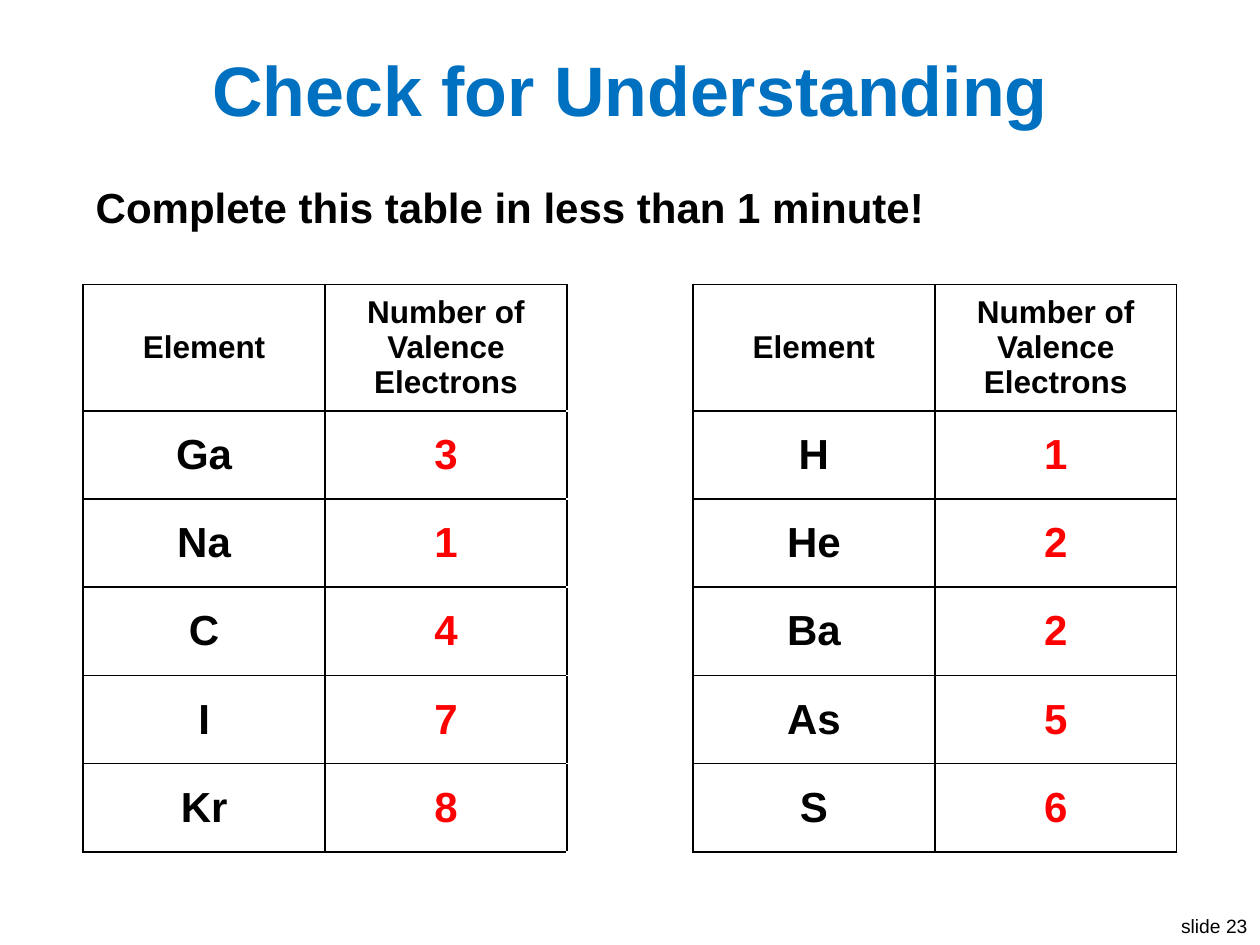
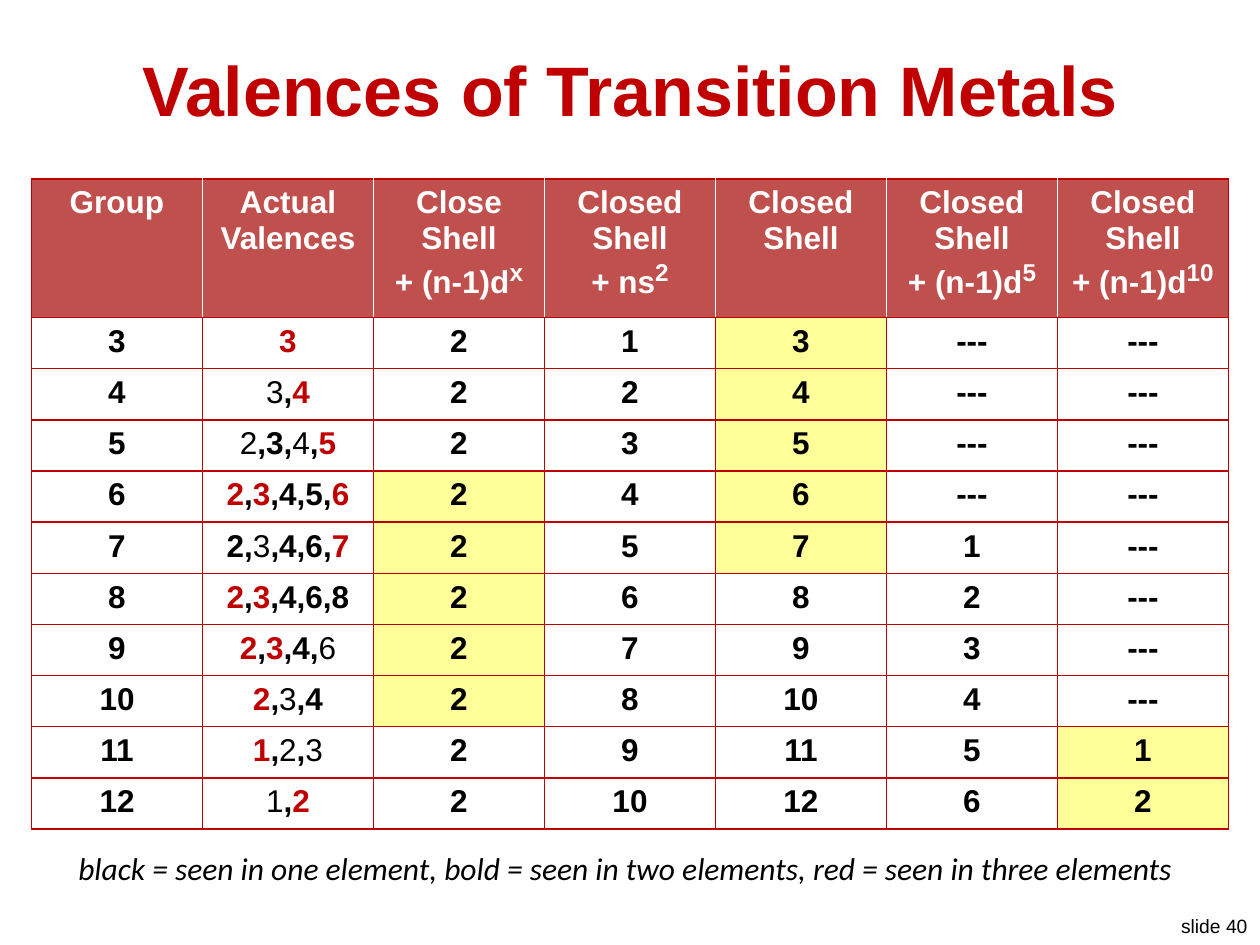
from itertools import groupby

from lxml.etree import SubElement
from pptx import Presentation
from pptx.dml.color import RGBColor
from pptx.enum.text import MSO_ANCHOR as Anchor, MSO_AUTO_SIZE as AutoSize, PP_ALIGN as Align
from pptx.oxml.ns import qn
from pptx.util import Inches, Pt

BLACK = RGBColor(0, 0, 0)
WHITE = RGBColor(0xFF, 0xFF, 0xFF)
BLUE = RGBColor(0x00, 0x70, 0xC0)
RED = RGBColor(0xFF, 0, 0)
DARK_RED = RGBColor(0xC0, 0, 0)
BRICK = RGBColor(0xC0, 0x50, 0x4D)
YELLOW = RGBColor(0xFF, 0xFF, 0x99)

SLIDE_W, SLIDE_H = 10, 7.5
TABLE_TOP = 1.42

QUIZ_TITLE = "Check for Understanding"
QUIZ_TASK = "Complete this table in less than 1 minute!"
QUIZ_HEADINGS = ("Element", "Number of Valence Electrons")
QUIZ_LEFT = [("Ga", 3), ("Na", 1), ("C", 4), ("I", 7), ("Kr", 8)]
QUIZ_RIGHT = [("H", 1), ("He", 2), ("Ba", 2), ("As", 5), ("S", 6)]
QUIZ_COLUMNS = (1.92, 1.92, 1, 1.92, 1.92)
QUIZ_ROWS = (0.84, 0.94) + (0.7,) * len(QUIZ_LEFT)
GAP_COLUMN = 2

METALS_TITLE = "Valences of Transition Metals"
METALS_HEADINGS = [
    ("Group",),
    ("Actual Valences",),
    ("Close Shell", "+ (n-1)d", "x"),
    ("Closed Shell", "+ ns", "2"),
    ("Closed Shell",),
    ("Closed Shell", "+ (n-1)d", "5"),
    ("Closed Shell", "+ (n-1)d", "10"),
]
# n = normal, b = bold, r = red
METALS = [
    ("3", "r3", "2", "1", "3", "---", "---"),
    ("4", "n3 r4", "2", "2", "4", "---", "---"),
    ("5", "n2 b3 n4 r5", "2", "3", "5", "---", "---"),
    ("6", "r2 r3 b4 b5 r6", "2", "4", "6", "---", "---"),
    ("7", "b2 n3 b4 b6 r7", "2", "5", "7", "1", "---"),
    ("8", "r2 r3 b4 b6 b8", "2", "6", "8", "2", "---"),
    ("9", "r2 r3 b4 n6", "2", "7", "9", "3", "---"),
    ("10", "r2 n3 b4", "2", "8", "10", "4", "---"),
    ("11", "r1 n2 n3", "2", "9", "11", "5", "1"),
    ("12", "n1 r2", "2", "10", "12", "6", "2"),
]
VALENCE_COLUMN = 1
HIGHLIGHTED_GROUPS = {2: range(6, 11), 4: range(3, 8), 6: range(11, 13)}
METALS_WIDTH = 0.95 * SLIDE_W
METALS_HEADER_H, METALS_BODY_H = 1.03, 4.06
LEGEND = "black = seen in one element, bold = seen in two elements, red = seen in three elements"


def add_run(paragraph, text, size, color=BLACK, bold=True, italic=False, font="Arial", raised=False):
    run = paragraph.add_run()
    run.text = text
    run.font.name, run.font.size = font, Pt(size)
    run.font.bold, run.font.italic = bold, italic
    run.font.color.rgb = color
    if raised:
        run._r.get_or_add_rPr().set("baseline", "30000")


def add_line(slide, box, text, align, size, **style):
    frame = slide.shapes.add_textbox(*map(Inches, box)).text_frame
    frame.word_wrap = False
    frame.paragraphs[0].alignment = align
    add_run(frame.paragraphs[0], text, size, bold=False, **style)


def start_slide(prs, title, color, number):
    slide = prs.slides.add_slide(prs.slide_layouts[5])
    heading = slide.shapes.title
    heading.left, heading.top = Inches(0.02 * SLIDE_W), Inches(0.04 * SLIDE_H)
    heading.width, heading.height = Inches(0.96 * SLIDE_W), Inches(0.8)
    frame = heading.text_frame
    frame.auto_size = AutoSize.NONE
    frame.vertical_anchor = Anchor.MIDDLE
    frame.paragraphs[0].alignment = Align.CENTER
    add_run(frame.paragraphs[0], title, 40, color)
    add_line(slide, (9.25, 7.21, 0.75, 0.29), f"slide {number}", Align.RIGHT, 11)
    return slide


def add_grid(slide, widths, heights):
    left = (SLIDE_W - sum(widths)) / 2
    box = (left, TABLE_TOP, sum(widths), sum(heights))
    table = slide.shapes.add_table(len(heights), len(widths), *map(Inches, box)).table
    table.first_row = table.horz_banding = False
    for column, width in zip(table.columns, widths):
        column.width = Inches(width)
    for row, height in zip(table.rows, heights):
        row.height = Inches(height)
    return table


def dress(cell, borders, fill=None, anchor=Anchor.MIDDLE):
    cell.vertical_anchor = anchor
    props = cell._tc.get_or_add_tcPr()
    for side, color in zip("LRTB", borders):
        line = SubElement(props, qn(f"a:ln{side}"), w=str(Pt(1)))
        paint = SubElement(line, qn("a:solidFill"))
        SubElement(paint, qn("a:srgbClr"), val=str(color))
    if fill is None:
        cell.fill.background()
    else:
        cell.fill.solid()
        cell.fill.fore_color.rgb = fill


def centred(cell, text, size, color=BLACK):
    paragraph = cell.text_frame.paragraphs[0]
    paragraph.alignment = Align.CENTER
    add_run(paragraph, text, size, color)


def build_quiz(prs):
    slide = start_slide(prs, QUIZ_TITLE, BLUE, 23)
    table = add_grid(slide, QUIZ_COLUMNS, QUIZ_ROWS)
    for c in range(len(QUIZ_COLUMNS)):
        dress(table.cell(0, c), (WHITE, WHITE, WHITE, BLACK), anchor=Anchor.TOP)
    table.cell(0, 0).merge(table.cell(0, len(QUIZ_COLUMNS) - 1))
    add_run(table.cell(0, 0).text_frame.paragraphs[0], QUIZ_TASK, 24)

    rows = [(QUIZ_HEADINGS, QUIZ_HEADINGS)] + list(zip(QUIZ_LEFT, QUIZ_RIGHT))
    for r, halves in enumerate(rows, 1):
        dress(table.cell(r, GAP_COLUMN), (BLACK, BLACK, WHITE, WHITE))
        for first, pair in zip((0, GAP_COLUMN + 1), halves):
            for offset, value in enumerate(pair):
                cell = table.cell(r, first + offset)
                dress(cell, (BLACK,) * 4)
                is_answer = r > 1 and offset == 1
                centred(cell, str(value), 24 if r > 1 else 18, RED if is_answer else BLACK)


def write_valences(cell, marked):
    pieces = []
    for valence in marked.split():
        if pieces:
            pieces.append(("b", ","))
        pieces.append((valence[0], valence[1:]))
    paragraph = cell.text_frame.paragraphs[0]
    paragraph.alignment = Align.CENTER
    for mark, group in groupby(pieces, key=lambda piece: piece[0]):
        text = "".join(piece[1] for piece in group)
        add_run(paragraph, text, 18, DARK_RED if mark == "r" else BLACK, bold=mark != "n")


def build_metals(prs):
    slide = start_slide(prs, METALS_TITLE, DARK_RED, 40)
    count = len(METALS_HEADINGS)
    heights = [METALS_HEADER_H] + [METALS_BODY_H / len(METALS)] * len(METALS)
    table = add_grid(slide, [METALS_WIDTH / count] * count, heights)

    for c, (label, *formula) in enumerate(METALS_HEADINGS):
        cell = table.cell(0, c)
        left = WHITE if c else DARK_RED
        right = WHITE if c < count - 1 else DARK_RED
        dress(cell, (left, right, DARK_RED, DARK_RED), BRICK, Anchor.TOP)
        centred(cell, label, 18, WHITE)
        if formula:
            base, exponent = formula
            paragraph = cell.text_frame.add_paragraph()
            paragraph.alignment = Align.CENTER
            add_run(paragraph, base, 18, WHITE)
            add_run(paragraph, exponent, 24, WHITE, raised=True)

    for r, values in enumerate(METALS, 1):
        for c, value in enumerate(values):
            cell = table.cell(r, c)
            highlighted = int(values[0]) in HIGHLIGHTED_GROUPS.get(c, ())
            dress(cell, (DARK_RED,) * 4, YELLOW if highlighted else None, Anchor.TOP)
            if c == VALENCE_COLUMN:
                write_valences(cell, value)
            else:
                centred(cell, value, 18)

    add_line(slide, (0.33, 6.69, 9.27, 0.4), LEGEND, Align.CENTER, 18, italic=True, font="Calibri")


def main():
    prs = Presentation()
    prs.slide_width, prs.slide_height = Inches(SLIDE_W), Inches(SLIDE_H)
    build_quiz(prs)
    build_metals(prs)
    prs.save("out.pptx")


if __name__ == "__main__":
    main()
